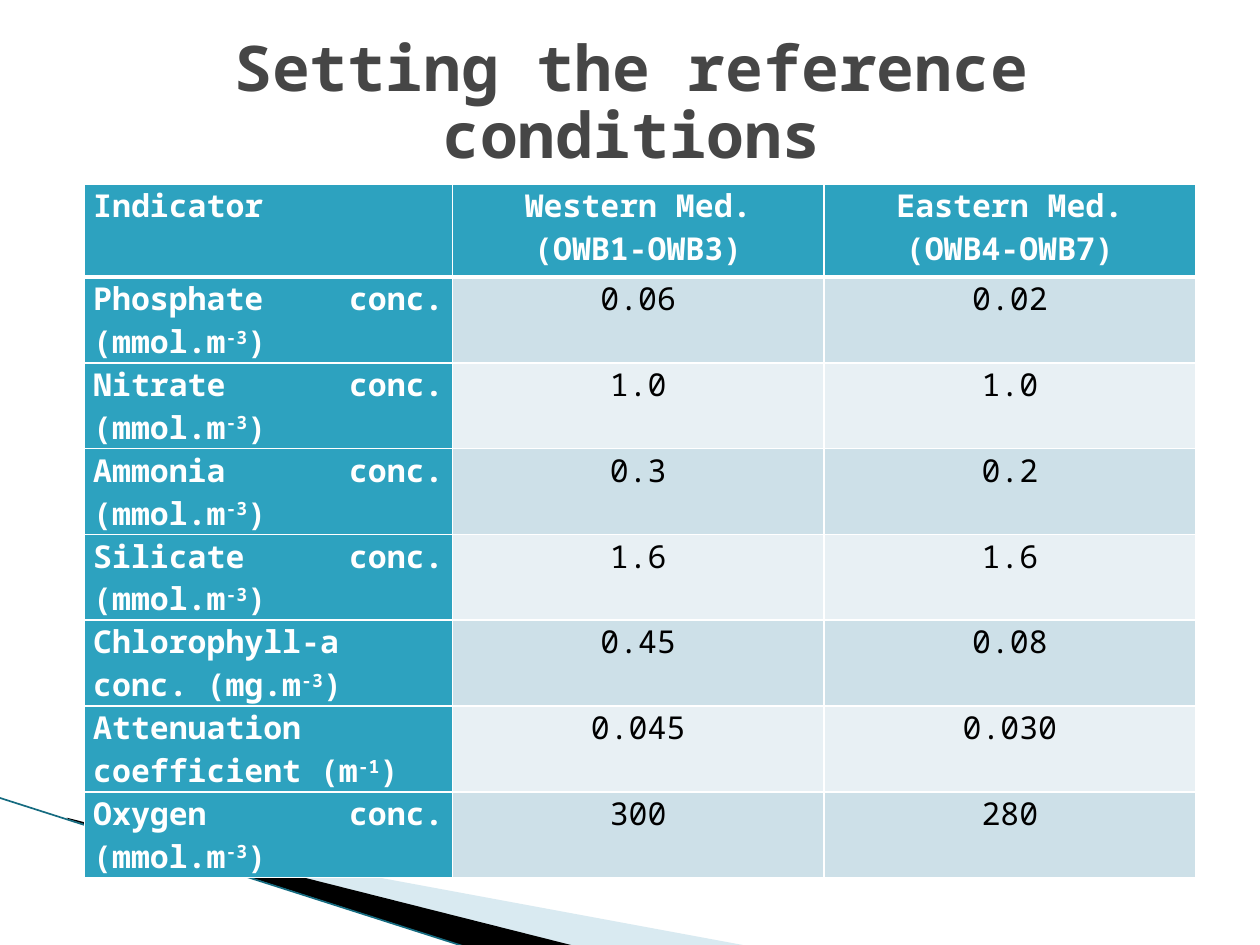
from dataclasses import dataclass

from lxml import etree
from pptx import Presentation
from pptx.dml.color import RGBColor
from pptx.enum.shapes import MSO_CONNECTOR
from pptx.enum.text import MSO_ANCHOR, MSO_AUTO_SIZE, PP_ALIGN
from pptx.oxml.ns import qn
from pptx.util import Inches, Pt

STRAIGHT = MSO_CONNECTOR.STRAIGHT
MIDDLE = MSO_ANCHOR.MIDDLE
FIXED = MSO_AUTO_SIZE.NONE
CENTER, JUSTIFY = PP_ALIGN.CENTER, PP_ALIGN.JUSTIFY
TITLE_ONLY = 5
GRID_COLUMNS, GRID_ROWS = 100, 75


@dataclass(frozen=True)
class Theme:
    font: str = "Noto Sans Mono"
    title_size: float = 36
    table_size: float = 18
    title: str = "464646"
    accent: str = "2DA2BF"
    bands: tuple = ("CDE0E8", "E8F0F4")
    white: str = "FFFFFF"
    black: str = "000000"
    pale: str = "A0CBDC"
    edge: str = "156B80"
    edge_width: float = 0.95
    border: float = 1
    header_border: float = 3


def apply(target, values):
    for name, value in values.items():
        setattr(target, name, value)


class SlideBuilder:
    def __init__(self, deck, theme):
        self.theme = theme
        self.column = deck.slide_width / GRID_COLUMNS
        self.row = deck.slide_height / GRID_ROWS
        self.page = deck.slides.add_slide(deck.slide_layouts[TITLE_ONLY])

    def x(self, columns):
        return round(columns * self.column)

    def y(self, rows):
        return round(rows * self.row)

    def style(self, span, size, color, bold):
        apply(span.font, {"name": self.theme.font, "size": Pt(size), "bold": bold})
        span.font.color.rgb = RGBColor.from_string(color)

    def ribbon(self, points, color, opacity=100):
        corners = [(self.x(column), self.y(row)) for column, row in points]
        builder = self.page.shapes.build_freeform(*corners[0], scale=1.0)
        builder.add_line_segments(corners[1:], close=True)
        shape = builder.convert_to_shape()
        shape.shadow.inherit = False
        shape.line.fill.background()
        shape.fill.solid()
        shape.fill.fore_color.rgb = RGBColor.from_string(color)
        if opacity < 100:
            tint = shape.element.spPr.find(".//" + qn("a:srgbClr"))
            etree.SubElement(tint, qn("a:alpha"), val=str(opacity * 1000))

    def line(self, start, end, color, width):
        connector = self.page.shapes.add_connector(
            STRAIGHT, self.x(start[0]), self.y(start[1]), self.x(end[0]), self.y(end[1])
        )
        connector.line.width = Pt(width)
        connector.line.color.rgb = RGBColor.from_string(color)
        etree.SubElement(connector.element.spPr, qn("a:effectLst"))

    def title(self, text, left, top, width, height):
        box = self.page.shapes.title
        apply(box, {"left": self.x(left), "top": self.y(top),
                    "width": self.x(width), "height": self.y(height)})
        apply(box.text_frame, {"word_wrap": True, "vertical_anchor": MIDDLE,
                               "auto_size": FIXED})
        para = box.text_frame.paragraphs[0]
        apply(para, {"alignment": CENTER, "line_spacing": 0.88})
        span = para.add_run()
        span.text = text
        self.style(span, self.theme.title_size, self.theme.title, True)
        self.page.shapes.element.append(box.element)

    def borders(self, cell, widths):
        properties = cell._tc.get_or_add_tcPr()
        for side, width in zip("LRTB", widths):
            edge = etree.SubElement(properties, qn(f"a:ln{side}"), w=str(Pt(width)))
            fill = etree.SubElement(edge, qn("a:solidFill"))
            etree.SubElement(fill, qn("a:srgbClr"), val=self.theme.white)

    def cell(self, cell, spans, row, column):
        theme = self.theme
        thin, thick = theme.border, theme.header_border
        heading = row == 0 or column == 0
        self.borders(cell, (thin, thin, thick if row == 1 else thin,
                            thick if row == 0 else thin))
        apply(cell, {"margin_left": Inches(0.07), "margin_right": Inches(0.07),
                     "margin_top": 0, "margin_bottom": 0})
        cell.fill.solid()
        fill = theme.accent if heading else theme.bands[(row - 1) % 2]
        cell.fill.fore_color.rgb = RGBColor.from_string(fill)
        para = cell.text_frame.paragraphs[0]
        apply(para, {"alignment": CENTER if column else JUSTIFY,
                     "space_after": Pt(0 if row else 3)})
        for index, text in enumerate(spans):
            span = para.add_run()
            span.text = text
            self.style(span, theme.table_size,
                       theme.white if heading else theme.black, heading)
            if index == 1:
                span._r.get_or_add_rPr().set("baseline", "30000")

    def table(self, rows, left, top, widths, header_height, row_height):
        heights = [header_height] + [row_height] * (len(rows) - 1)
        table = self.page.shapes.add_table(
            len(rows), len(widths), self.x(left), self.y(top),
            self.x(sum(widths)), self.y(sum(heights))
        ).table
        for column, width in zip(table.columns, widths):
            column.width = self.x(width)
        for row, height in zip(table.rows, heights):
            row.height = self.y(height)
        for row, values in enumerate(rows):
            for column, spans in enumerate(values):
                self.cell(table.cell(row, column), spans, row, column)


def indicator(name, unit, power, western, eastern):
    return (f"{name} ({unit}", power, ")"), (western,), (eastern,)


def main():
    deck = Presentation()
    deck.slide_width, deck.slide_height = Inches(10), Inches(7.5)
    theme = Theme()
    slide = SlideBuilder(deck, theme)

    slide.ribbon([(5.5, 65.1), (59.5, 75.1), (45.6, 75.1), (5.5, 65)], theme.pale, 40)
    slide.ribbon([(5.3, 64.9), (45.7, 75.1), (37.2, 75.2), (5.4, 65)], theme.black)
    slide.line((-0.1, 63.3), (37.1, 75.2), theme.edge, theme.edge_width)
    slide.title("Setting the reference conditions", 5.1, 2.1, 90, 12.5)

    rows = [
        (("Indicator",), ("Western Med. (OWB1-OWB3)",), ("Eastern Med. (OWB4-OWB7)",)),
        indicator("Phosphate conc.", "mmol.m", "-3", "0.06", "0.02"),
        indicator("Nitrate conc.", "mmol.m", "-3", "1.0", "1.0"),
        indicator("Ammonia conc.", "mmol.m", "-3", "0.3", "0.2"),
        indicator("Silicate conc.", "mmol.m", "-3", "1.6", "1.6"),
        indicator("Chlorophyll-a conc.", "mg.m", "-3", "0.45", "0.08"),
        indicator("Attenuation coefficient", "m", "-1", "0.045", "0.030"),
        indicator("Oxygen conc.", "mmol.m", "-3", "300", "280"),
    ]
    slide.table(rows, 6.7, 14.6, (29.2, 29.5, 29.5), 7.4, 6.3)
    deck.save("out.pptx")


if __name__ == "__main__":
    main()
